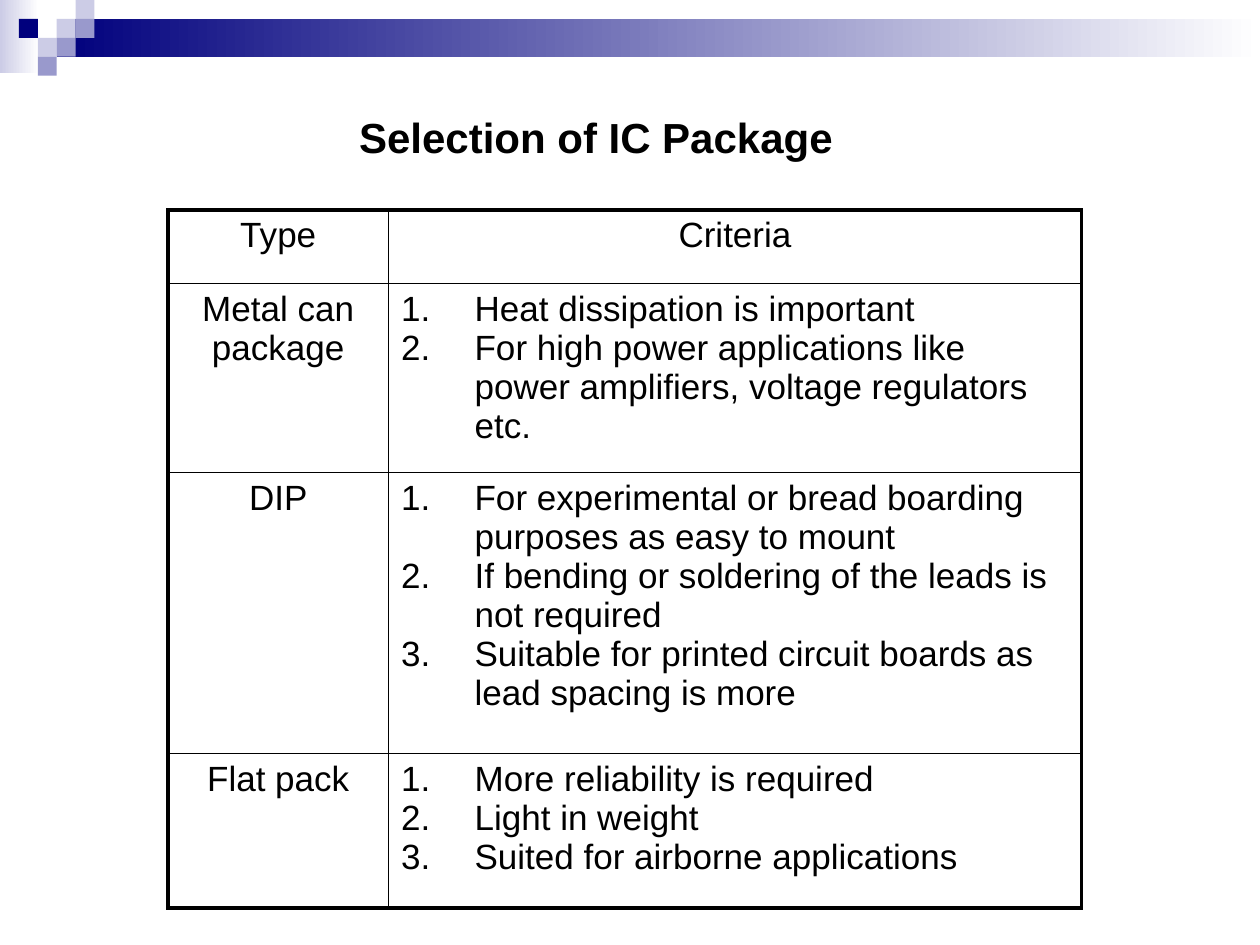
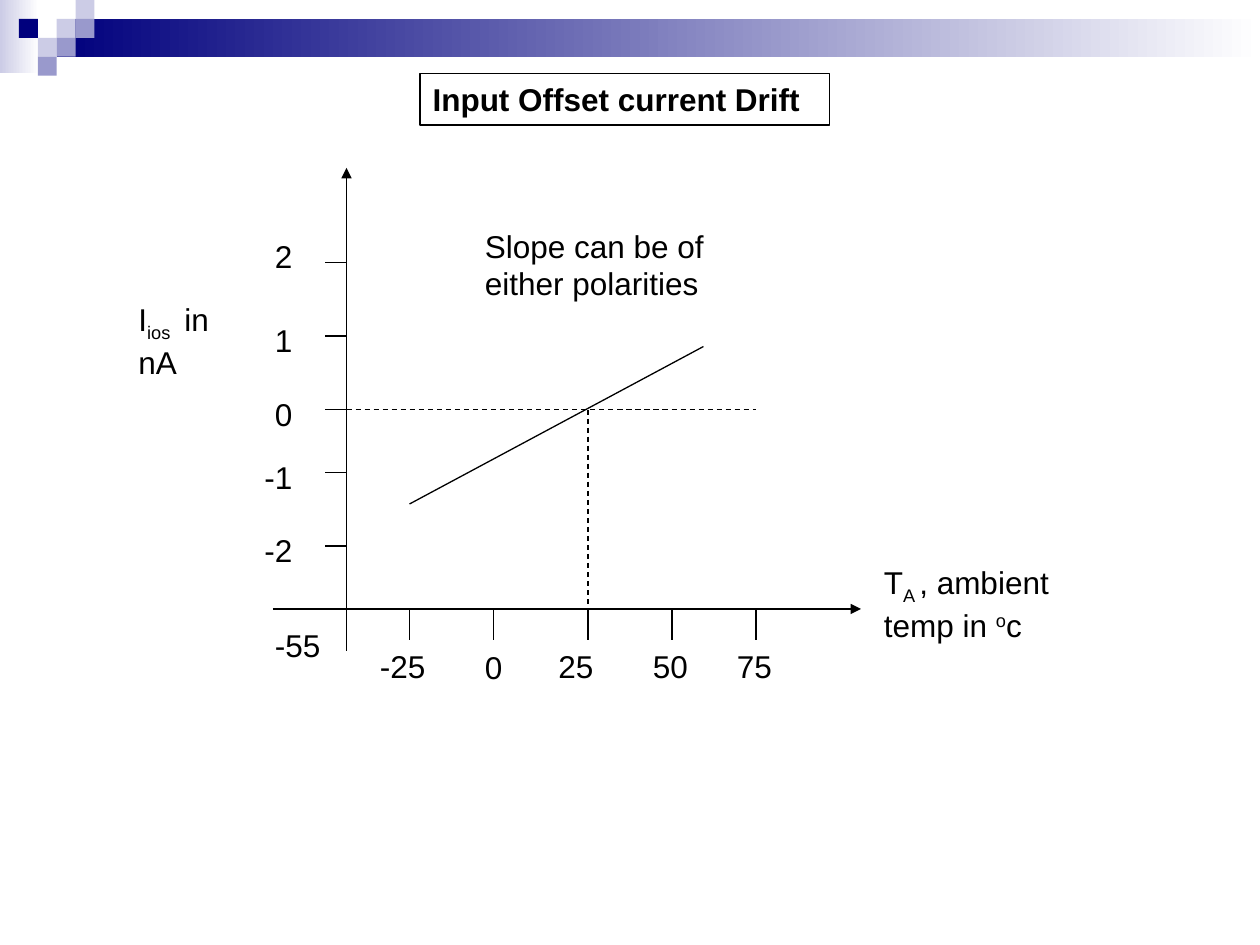
import dataclasses

import pptx
import pptx.dml.color
import pptx.enum.dml
import pptx.enum.shapes
import pptx.enum.text
import pptx.oxml
import pptx.oxml.ns
import pptx.util

Pt = pptx.util.Pt
RECTANGLE = pptx.enum.shapes.MSO_SHAPE.RECTANGLE
ALIGN = pptx.enum.text.PP_ALIGN
A_NS = pptx.oxml.ns.nsdecls("a")


@dataclasses.dataclass(frozen=True)
class Theme:
    font: str = "Arial"
    ink: str = "000000"
    paper: str = "FFFFFF"
    navy: str = "00007D"
    lilac: str = "9999CC"
    pale: str = "CCCCE6"
    title_size: float = 24
    table_size: float = 20
    label_size: float = 18
    thin: float = 0.75
    grid: float = 1
    frame: float = 2.25


THEME = Theme()

PACKAGES = [
    ("Metal can package", [
        "Heat dissipation is important",
        "For high power applications like power amplifiers, voltage regulators etc."]),
    ("DIP", [
        "For experimental or bread boarding purposes as easy to mount",
        "If bending or soldering of the leads is not required",
        "Suitable for printed circuit boards as lead spacing is more"]),
    ("Flat pack", [
        "More reliability is required",
        "Light in weight",
        "Suited for airborne applications"]),
]

# Label, tick position along the axis, label's left and top
CURRENT_TICKS = [("2", 54, 78, 36), ("1", 96, 78, 84), ("0", 138, 78, 126),
                 ("-1", 174, 72, 162), ("-2", 216, 72, 204)]
TEMPERATURE_TICKS = [("-25", 162, 138, 270), ("0", 210, 198, 271), ("25", 264, 240, 270),
                     ("50", 312, 294, 270), ("75", 360, 342, 270)]


def rgb(code):
    return pptx.dml.color.RGBColor.from_string(code)


def points(*lengths):
    return [Pt(length) for length in lengths]


def add_run(paragraph, text, size, bold=False, baseline=0):
    """Add one run; baseline is the shift in percent."""
    run = paragraph.add_run()
    run.text = text
    run.font.name = THEME.font
    run.font.size = Pt(size)
    run.font.bold = bold
    run.font.color.rgb = rgb(THEME.ink)
    if baseline:
        run._r.get_or_add_rPr().set("baseline", str(baseline * 1000))


def add_tile(shapes, box, start, end=None):
    """Add a borderless rectangle, plain or fading from start to end."""
    tile = shapes.add_shape(RECTANGLE, *points(*box))
    tile.shadow.inherit = False
    tile.line.fill.background()
    if end is None:
        tile.fill.solid()
        tile.fill.fore_color.rgb = rgb(start)
        return
    tile.fill.gradient()
    tile.fill.gradient_angle = 0
    for stop, code in zip(tile.fill.gradient_stops, (start, end)):
        stop.color.rgb = rgb(code)


def add_master_band(prs, slide):
    """Draw the header band on a slide, then move it behind the master's parts."""
    band = slide.shapes.add_group_shape()
    side = 10.8
    add_tile(band.shapes, (0, 0, 22.3, 41.8), THEME.pale, THEME.paper)
    add_tile(band.shapes, (3 * side, side, 720 - 3 * side, 2 * side), THEME.navy, THEME.paper)
    mosaic = [(3, 1, THEME.pale), (4, 0, THEME.pale), (4, 1, THEME.lilac),
              (2, 2, THEME.pale), (1, 1, THEME.navy), (3, 2, THEME.lilac),
              (2, 3, THEME.lilac)]
    for column, row, code in mosaic:
        add_tile(band.shapes, (column * side, row * side, side, side), code)
    for number, props in enumerate(band.element.iter(pptx.oxml.ns.qn("p:cNvPr")), 100):
        props.set("id", str(number))
    prs.slide_master.element.cSld.spTree.insert(2, band.element)


def set_title(slide, text, box, size):
    title = slide.shapes.title
    title.left, title.top, title.width, title.height = points(*box)
    frame = title.text_frame
    frame.auto_size = pptx.enum.text.MSO_AUTO_SIZE.NONE
    frame.vertical_anchor = pptx.enum.text.MSO_ANCHOR.TOP
    frame.word_wrap = True
    heading = frame.paragraphs[0]
    heading.alignment = ALIGN.LEFT
    heading.space_before = Pt(size / 8)
    add_run(heading, text, size, bold=True)
    return title


def set_borders(cell, left, right, top, bottom):
    properties = cell._tc.get_or_add_tcPr()
    sides = {"lnL": left, "lnR": right, "lnT": top, "lnB": bottom}
    for index, (tag, width) in enumerate(sides.items()):
        properties.insert(index, pptx.oxml.parse_xml(
            f'<a:{tag} {A_NS} w="{Pt(width)}"><a:solidFill><a:srgbClr val="{THEME.ink}"/>'
            f'</a:solidFill><a:prstDash val="solid"/></a:{tag}>'))


def number_paragraph(paragraph, indent):
    properties = paragraph._p.get_or_add_pPr()
    properties.set("marL", str(Pt(indent)))
    properties.set("indent", str(-Pt(indent)))
    properties.append(pptx.oxml.parse_xml(f'<a:buAutoNum {A_NS} type="arabicPeriod"/>'))


def fill_cell(cell, lines, numbered=False):
    for index, line in enumerate(lines):
        frame = cell.text_frame
        paragraph = frame.add_paragraph() if index else frame.paragraphs[0]
        if numbered:
            number_paragraph(paragraph, 42)
        else:
            paragraph.alignment = ALIGN.CENTER
        add_run(paragraph, line, THEME.table_size)


def add_package_table(slide, box):
    row_heights, column_widths = (42, 108, 160.5, 88.5), (126, 396)
    last_row, last_column = len(row_heights) - 1, len(column_widths) - 1
    table = slide.shapes.add_table(last_row + 1, last_column + 1, *points(*box)).table
    table.first_row = table.horz_banding = False
    for row, height in zip(table.rows, row_heights):
        row.height = Pt(height)
    for column, width in zip(table.columns, column_widths):
        column.width = Pt(width)

    fill_cell(table.cell(0, 0), ["Type"])
    fill_cell(table.cell(0, 1), ["Criteria"])
    for row, (package, criteria) in enumerate(PACKAGES, 1):
        fill_cell(table.cell(row, 0), [package])
        fill_cell(table.cell(row, 1), criteria, numbered=True)

    for row in range(last_row + 1):
        for column in range(last_column + 1):
            cell = table.cell(row, column)
            cell.fill.background()
            outer = (column == 0, column == last_column, row == 0, row == last_row)
            set_borders(cell, *(THEME.frame if edge else THEME.grid for edge in outer))


def add_line(slide, origin, start, end, dashed=False, arrow=False):
    left, top = origin
    line = slide.shapes.add_connector(
        pptx.enum.shapes.MSO_CONNECTOR.STRAIGHT,
        *points(left + start[0], top + start[1], left + end[0], top + end[1]))
    line.line.color.rgb = rgb(THEME.ink)
    line.line.width = Pt(THEME.thin)
    if dashed:
        line.line.dash_style = pptx.enum.dml.MSO_LINE.DASH
    if arrow:
        line.line._get_or_add_ln().append(
            pptx.oxml.parse_xml(f'<a:tailEnd {A_NS} type="triangle"/>'))
    line._element.spPr.append(pptx.oxml.parse_xml(f"<a:effectLst {A_NS}/>"))


def add_label(slide, origin, box, *parts):
    """Add a text box; each part is a text and its baseline shift."""
    left, top, width, height = box
    label = slide.shapes.add_textbox(
        *points(origin[0] + left, origin[1] + top, width, height))
    label.text_frame.word_wrap = True
    paragraph = label.text_frame.paragraphs[0]
    paragraph.space_before = Pt(THEME.label_size / 8)
    for text, baseline in parts:
        add_run(paragraph, text, THEME.label_size, baseline=baseline)


def add_drift_graph(slide, origin):
    axis_x, axis_y, zero_y, room_x = 126, 252, 138, 264
    add_line(slide, origin, (axis_x, 276), (axis_x, 0), arrow=True)
    add_line(slide, origin, (84, axis_y), (420, axis_y), arrow=True)
    add_line(slide, origin, (162, 192), (330, 102))
    add_line(slide, origin, (axis_x, zero_y), (360, zero_y), dashed=True)
    add_line(slide, origin, (room_x, zero_y), (room_x, axis_y), dashed=True)

    for text, y, left, top in CURRENT_TICKS:
        add_line(slide, origin, (axis_x - 12, y), (axis_x, y))
        add_label(slide, origin, (left, top, 36, 28.8), (text, 0))
    for text, x, left, top in TEMPERATURE_TICKS:
        add_line(slide, origin, (x, axis_y), (x, axis_y + 18))
        add_label(slide, origin, (left, top, 48, 28.8), (text, 0))
    add_label(slide, origin, (78, 258, 48, 28.8), ("-55", 0))

    add_label(slide, origin, (0, 72, 60, 57.6), ("I", 0), ("ios ", -25), (" in nA", 0))
    add_label(slide, origin, (426, 222, 150, 57.6), ("T", 0), ("A ", -25),
              (", ambient temp in ", 0), ("o", 30), ("c", 0))
    add_label(slide, origin, (198, 30, 162, 50.4), ("Slope can be of either polarities", 0))


def add_title_slide(prs):
    """Add a slide that keeps only its title placeholder."""
    slide = prs.slides.add_slide(prs.slide_layouts.get_by_name("Title Only"))
    return slide


def build_package_slide(prs):
    slide = add_title_slide(prs)
    set_title(slide, "Selection of IC Package", (198, 60, 294, 39), THEME.title_size)
    add_package_table(slide, (96, 120, 522, 399))
    return slide


def build_drift_slide(prs):
    slide = add_title_slide(prs)
    title = set_title(slide, "Input Offset current Drift", (240, 42, 234, 29.5),
                      THEME.label_size)
    title.line.color.rgb = rgb(THEME.ink)
    title.line.width = Pt(THEME.thin)
    add_drift_graph(slide, (72, 96))


def main():
    prs = pptx.Presentation()
    prs.slide_width, prs.slide_height = points(720, 540)
    package_slide = build_package_slide(prs)
    add_master_band(prs, package_slide)
    build_drift_slide(prs)
    prs.save("out.pptx")


if __name__ == "__main__":
    main()
